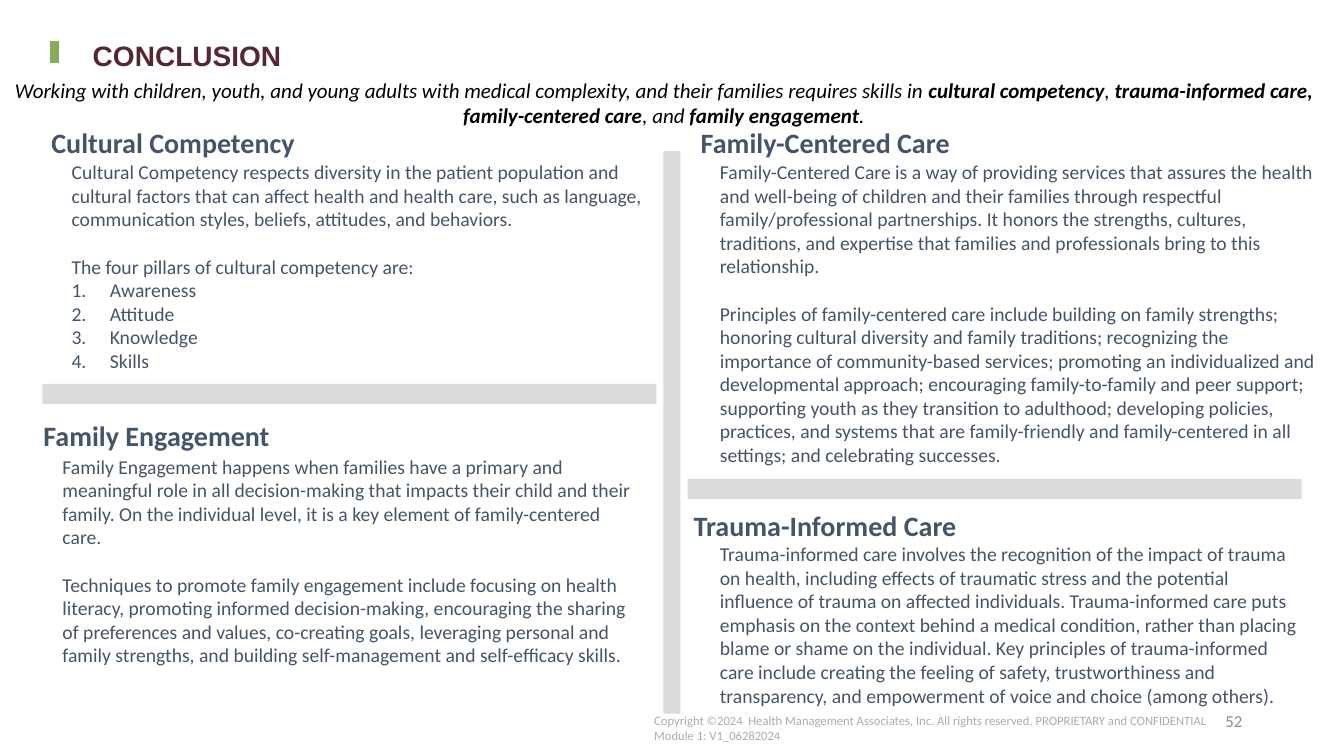
from lxml import etree
from pptx import Presentation
from pptx.dml.color import RGBColor
from pptx.enum.shapes import MSO_CONNECTOR, MSO_SHAPE
from pptx.enum.text import MSO_ANCHOR, PP_ALIGN
from pptx.oxml.ns import qn
from pptx.util import Inches, Pt

LINE = MSO_CONNECTOR.STRAIGHT
RECT = MSO_SHAPE.RECTANGLE
MIDDLE = MSO_ANCHOR.MIDDLE
CENTER, RIGHT = PP_ALIGN.CENTER, PP_ALIGN.RIGHT

COLORS = {
    "title": "552733", "accent": "86AB5D", "bar": "DBDBDB", "text": "44546A",
    "intro": "000000", "footer": "AFABAB", "number": "8C8C8C",
}
DEFAULT_INSETS = (0.1, 0.05, 0.1, 0.05)
HEADING_INSETS = (0.13, 0.07, 0.13, 0.07)
BODY_INSETS = (0.2, 0.2, 0.2, 0.1)

TITLE_FONT = {"name": "Arial", "size": Pt(20), "bold": True}
HEADING_FONT = {"name": "Calibri", "size": Pt(20), "bold": True}
BODY_FONT = {"name": "Calibri", "size": Pt(14)}
INTRO_FONT = {"name": "Calibri", "size": Pt(15), "italic": True}
FOOTER_FONT = {"name": "Calibri", "size": Pt(9)}
NUMBER_FONT = {"name": "Calibri", "size": Pt(12)}

INTRO = [
    ("Working with children, youth, and young adults with medical complexity, and their families requires skills in ", False),
    ("cultural competency", True),
    (", ", False),
    ("trauma-informed care, family-centered care", True),
    (", and ", False),
    ("family engagement", True),
    (".", False),
]
FOOTER = [
    "Copyright ©2024  Health Management Associates, Inc. All rights reserved. PROPRIETARY and CONFIDENTIAL",
    "Module 1: V1_06282024",
]
PILLARS = ["Awareness", "Attitude", "Knowledge", "Skills"]
SECTIONS = [
    ("Cultural Competency", (0.38, 1.17), (0.51, 1.39, 6.16, 2.45), [
        "Cultural Competency respects diversity in the patient population and cultural factors that can affect health and health care, such as language, communication styles, beliefs, attitudes, and behaviors.",
        "The four pillars of cultural competency are:",
    ], PILLARS),
    ("Family-Centered Care", (6.82, 1.17), (6.94, 1.39, 6.4, 2.4), [
        "Family-Centered Care is a way of providing services that assures the health and well-being of children and their families through respectful family/professional partnerships. It honors the strengths, cultures, traditions, and expertise that families and professionals bring to this relationship.",
        "Principles of family-centered care include building on family strengths; honoring cultural diversity and family traditions; recognizing the importance of community-based services; promoting an individualized and developmental approach; encouraging family-to-family and peer support; supporting youth as they transition to adulthood; developing policies, practices, and systems that are family-friendly and family-centered in all settings; and celebrating successes.",
    ], []),
    ("Family Engagement", (0.3, 4.08), (0.42, 4.31, 6.16, 2.45), [
        "Family Engagement happens when families have a primary and meaningful role in all decision-making that impacts their child and their family. On the individual level, it is a key element of family-centered care.",
        "Techniques to promote family engagement include focusing on health literacy, promoting informed decision-making, encouraging the sharing of preferences and values, co-creating goals, leveraging personal and family strengths, and building self-management and self-efficacy skills.",
    ], []),
    ("Trauma-Informed Care", (6.75, 4.97), (6.94, 5.18, 6.21, 1.77), [
        "Trauma-informed care involves the recognition of the impact of trauma on health, including effects of traumatic stress and the potential influence of trauma on affected individuals. Trauma-informed care puts emphasis on the context behind a medical condition, rather than placing blame or shame on the individual. Key principles of trauma-informed care include creating the feeling of safety, trustworthiness and transparency, and empowerment of voice and choice (among others).",
    ], []),
]
BARS = [(6.58, 1.5, 0.17, 5.58), (0.42, 3.81, 6.09, 0.2), (6.82, 4.75, 6.09, 0.2)]


def rgb(name):
    return RGBColor.from_string(COLORS[name])


def set_font(font, values, color):
    for key, value in values.items():
        setattr(font, key, value)
    font.color.rgb = rgb(color)


def number_paragraph(p):
    pPr = p._p.get_or_add_pPr()
    pPr.set("marL", str(Inches(0.38)))
    pPr.set("indent", str(-Inches(0.38)))
    etree.SubElement(pPr, qn("a:buAutoNum"), type="arabicPeriod")


def add_text(slide, box, lines, font, color, insets=DEFAULT_INSETS, gap=0, numbered=()):
    sp = slide.shapes.add_textbox(*map(Inches, box))
    tf = sp.text_frame
    tf.word_wrap = True
    for side, inset in zip(("left", "top", "right", "bottom"), insets):
        setattr(tf, f"margin_{side}", Inches(inset))
    for i, line in enumerate([*lines, *numbered]):
        p = tf.add_paragraph() if i else tf.paragraphs[0]
        if i >= len(lines):
            number_paragraph(p)
        elif i and gap:
            p.space_before = Pt(gap)
        runs = [(line, None)] if isinstance(line, str) else line
        for text, bold in runs:
            r = p.add_run()
            r.text = text
            set_font(r.font, font, color)
            if bold is not None:
                r.font.bold = bold
    return tf


def add_bar(slide, box):
    sp = slide.shapes.add_shape(RECT, *map(Inches, box))
    sp.shadow.inherit = False
    sp.fill.solid()
    sp.fill.fore_color.rgb = rgb("bar")
    sp.line.fill.background()


def add_accent(slide, x, top, bottom):
    line = slide.shapes.add_connector(LINE, Inches(x), Inches(top), Inches(x), Inches(bottom))
    line.line.color.rgb = rgb("accent")
    line.line.width = Pt(7)
    etree.SubElement(line._element.spPr, qn("a:effectLst"))


def add_section(slide, heading, corner, box, lines, numbered):
    add_text(slide, box, lines, BODY_FONT, "text", BODY_INSETS, 17, numbered)
    add_text(slide, (*corner, 4.31, 0.51), [heading], HEADING_FONT, "text", HEADING_INSETS)


def main():
    prs = Presentation()
    prs.slide_width, prs.slide_height = Inches(13.33), Inches(7.5)
    s = prs.slides.add_slide(prs.slide_layouts[6])

    add_text(s, (6.39, 7.02, 5.74, 0.4), FOOTER, FOOTER_FONT, "footer")
    add_accent(s, 0.54, 0.41, 0.63)
    tf = add_text(s, (0.92, 0.42, 11.5, 0.3), ["CONCLUSION"], TITLE_FONT, "title", (0, 0, 0, 0))
    tf.paragraphs[0].line_spacing = 0.9
    for box in BARS:
        add_bar(s, box)
    tf = add_text(s, (-0.05, 0.72, 13.27, 0.61), [INTRO], INTRO_FONT, "intro")
    tf.paragraphs[0].alignment = CENTER
    for section in SECTIONS:
        add_section(s, *section)
    tf = add_text(s, (9.42, 6.95, 3, 0.4), ["52"], NUMBER_FONT, "number")
    tf.vertical_anchor = MIDDLE
    tf.paragraphs[0].alignment = RIGHT

    prs.save("out.pptx")


if __name__ == "__main__":
    main()
